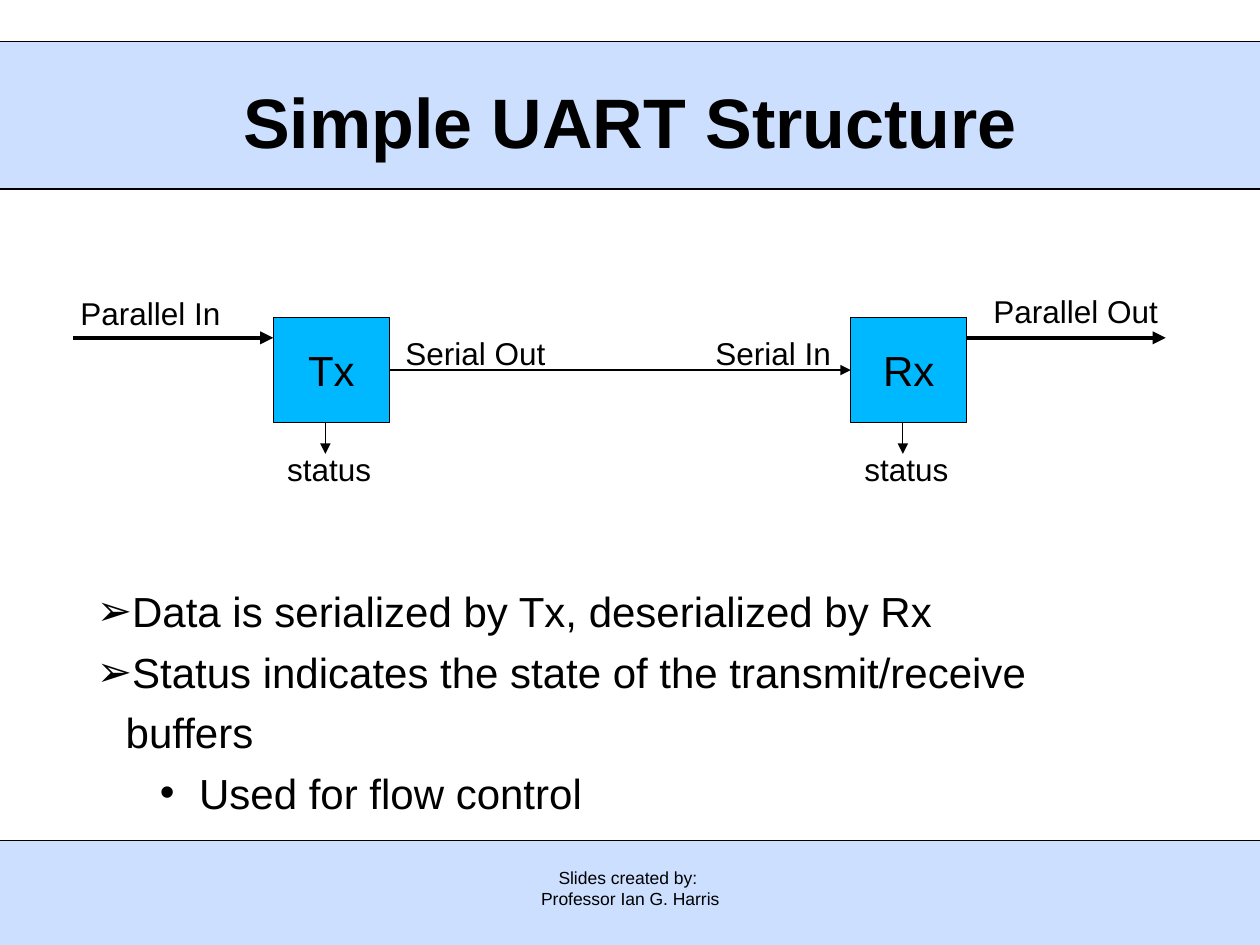
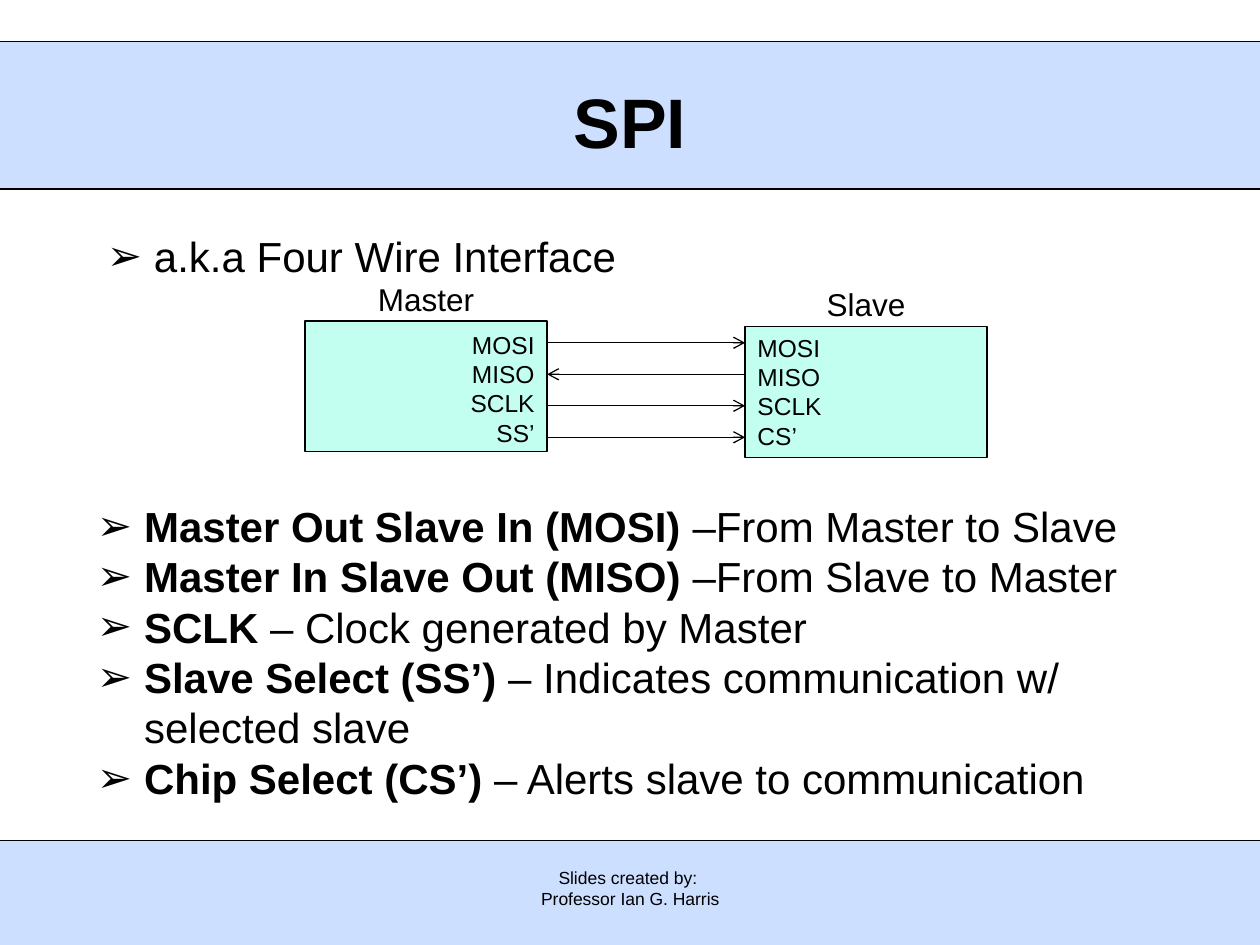
from lxml.etree import SubElement
from pptx import Presentation
from pptx.dml.color import RGBColor
from pptx.enum.shapes import MSO_CONNECTOR, MSO_SHAPE
from pptx.enum.text import MSO_ANCHOR, MSO_AUTO_SIZE, PP_ALIGN as ALIGN
from pptx.oxml.ns import qn
from pptx.util import Cm, Pt

COLORS = {
    "ink": "000000",
    "band": "CDDFFF",
    "station": "00B8FF",
    "device": "C2FFF0",
}
FONT = "Arial"
SLIDE_W, SLIDE_H = 25.4, 19.05
BANDS = [(16.94, 2.11), (0.84, 2.97)]  # top, height
RULES = [0.84, 3.81, 16.94]
ARROW_BULLET = ("➢", 0.95, 0.95)  # character, left margin, hanging indent
TIGHT_BULLET = ("➢", 0.58, 0.58)
DOT_BULLET = ("•", 2.06, 0.79)


def rgb(name):
    return RGBColor.from_string(COLORS[name])


# Basic parts; every length is in centimetres

def place(sp, x, y, w, h):
    sp.left, sp.top, sp.width, sp.height = Cm(x), Cm(y), Cm(w), Cm(h)


def write(tf, lines, size, align=ALIGN.LEFT):
    """Each line is a list of (text, bold) runs."""
    tf.word_wrap = True
    tf.auto_size = MSO_AUTO_SIZE.NONE
    for i, runs in enumerate(lines):
        p = tf.paragraphs[0] if i == 0 else tf.add_paragraph()
        p.alignment = align
        p.space_before = Pt(0)
        for text, bold in runs:
            r = p.add_run()
            r.text = text
            r.font.name, r.font.size, r.font.bold = FONT, Pt(size), bold
            r.font.color.rgb = rgb("ink")


def plain(*texts):
    return [[(text, False)] for text in texts]


def add_text(shapes, x, y, w, h, texts, size, align=ALIGN.CENTER):
    sp = shapes.add_textbox(Cm(x), Cm(y), Cm(w), Cm(h))
    write(sp.text_frame, plain(*texts), size, align)


def add_box(shapes, x, y, w, h, fill, line="ink"):
    sp = shapes.add_shape(MSO_SHAPE.RECTANGLE, Cm(x), Cm(y), Cm(w), Cm(h))
    sp.shadow.inherit = False
    sp.fill.solid()
    sp.fill.fore_color.rgb = rgb(fill)
    sp.line.color.rgb = rgb(line)
    sp.line.width = Pt(0.75)
    return sp


def add_line(shapes, x1, y1, x2, y2, width=0.75, head=None):
    cxn = shapes.add_connector(MSO_CONNECTOR.STRAIGHT,
                               Cm(x1), Cm(y1), Cm(x2), Cm(y2))
    cxn.line.color.rgb = rgb("ink")
    cxn.line.width = Pt(width)
    sp_pr = cxn.element.spPr
    if head:
        SubElement(sp_pr.find(qn("a:ln")), qn("a:tailEnd"), type=head)
    SubElement(sp_pr, qn("a:effectLst"))
    return cxn


def set_bullet(p, bullet, spacing):
    char, margin, hang = bullet
    p.line_spacing = spacing
    pPr = p._p.get_or_add_pPr()
    pPr.set("marL", str(Cm(margin)))
    pPr.set("indent", str(-Cm(hang)))
    clr = SubElement(pPr, qn("a:buClr"))
    SubElement(clr, qn("a:srgbClr"), val=COLORS["ink"])
    SubElement(pPr, qn("a:buFont"), typeface=FONT)
    SubElement(pPr, qn("a:buChar"), char=char)


def fill_list(ph, box, lines, bullets, spacing=1.0):
    place(ph, *box)
    write(ph.text_frame, lines, 24)
    for p, bullet in zip(ph.text_frame.paragraphs, bullets):
        p.level = 1 if bullet is DOT_BULLET else 0
        set_bullet(p, bullet, spacing)


# Shared frame: bands, rules, footer and title

def add_frame_slide(prs, layout, title):
    s = prs.slides.add_slide(prs.slide_layouts.get_by_name(layout))
    for top, height in BANDS:
        add_box(s.shapes, 0, top, SLIDE_W, height, "band", "band")
    for y in RULES:
        add_line(s.shapes, 0, y, SLIDE_W, y)
    add_text(s.shapes, 8.69, 17.35, 8.03, 1.24,
             ["Slides created by: ", "Professor Ian G. Harris"], 10)
    # Bring the placeholders in front of the bands
    for ph in list(s.placeholders):
        s.shapes.element.append(ph.element)
    place(s.shapes.title, 1.9, 0.84, 21.6, 3.18)
    write(s.shapes.title.text_frame, [[(title, True)]], 40, ALIGN.CENTER)
    return s


# UART diagram

def add_station(shapes, x, y, name):
    w, h = 2.34, 2.12
    sp = add_box(shapes, x, y, w, h, "station")
    tf = sp.text_frame
    write(tf, plain(name), 24, ALIGN.CENTER)
    tf.word_wrap = False
    tf.vertical_anchor = MSO_ANCHOR.MIDDLE
    add_line(shapes, x + 1.05, y + h, x + 1.05, y + 2.75, head="triangle")
    add_text(shapes, x - 0.64, y + 2.54, 3.53, 1.02, ["status"], 18)
    return sp


def add_uart_diagram(s, x, y):
    shapes = s.shapes.add_group_shape().shapes
    tx = add_station(shapes, x + 4.24, y + 0.63, "Tx")
    rx = add_station(shapes, x + 15.88, y + 0.63, "Rx")
    serial = add_line(shapes, x + 6.58, y + 1.69, x + 15.88, y + 1.69,
                      head="triangle")
    serial.begin_connect(tx, 3)
    serial.end_connect(rx, 1)
    for start, end in [(0.2, 4.24), (18.22, 22.23)]:
        add_line(shapes, x + start, y + 1.04, x + end, y + 1.04, 2.5, "triangle")
    for text, dx, dy, w in [("Serial Out", 6.55, 0.84, 3.53),
                            ("Serial In", 12.55, 0.84, 3.53),
                            ("Parallel In", 0, 0.03, 3.53),
                            ("Parallel Out", 18.41, 0, 4.01)]:
        add_text(shapes, x + dx, y + dy, w, 1.02, [text], 18)


# SPI diagram

def add_device(shapes, x, y, name, pins, pin_x, pin_y, align):
    add_box(shapes, x, y, 4.88, 2.64, "device")
    add_text(shapes, x + pin_x, y + pin_y, 1.92, 2.64, pins, 14, align)
    add_text(shapes, x + 0.42, y - 0.95, 4.04, 1.02, [name], 18)


def add_spi_diagram(s, x, y):
    shapes = s.shapes.add_group_shape().shapes
    bus = ["MOSI", "MISO", "SCLK"]
    add_device(shapes, x, y + 0.96, "Master", bus + ["SS’"],
               2.96, 0.05, ALIGN.RIGHT)
    add_device(shapes, x + 8.87, y + 1.07, "Slave", bus + ["CS’"],
               0, 0, ALIGN.LEFT)
    for i, pin in enumerate(bus + ["SS’"]):
        ends = [x + 4.88, x + 8.87]
        if pin == "MISO":
            ends.reverse()
        wire_y = y + 1.4 + i * 0.635
        add_line(shapes, ends[0], wire_y, ends[1], wire_y, head="arrow")


# Slides

def uart_slide(prs):
    s = add_frame_slide(prs, "Title and Content", "Simple UART Structure")
    add_uart_diagram(s, 1.27, 5.77)
    fill_list(s.placeholders[1], (1.7, 11.48, 21.7, 5.1), plain(
        "Data is serialized by Tx, deserialized by Rx",
        "Status indicates the state of the transmit/receive buffers",
        "Used for flow control",
    ), [TIGHT_BULLET, TIGHT_BULLET, DOT_BULLET], 1.2)


def spi_slide(prs):
    s = add_frame_slide(prs, "Two Content", "SPI")
    fill_list(s.placeholders[1], (1.9, 4.01, 22.66, 1.6),
              plain("a.k.a Four Wire Interface"), [ARROW_BULLET], 1.5)
    add_spi_diagram(s, 6.15, 5.51)
    signals = [
        ("Master Out Slave In (MOSI) ", "–From Master to Slave"),
        ("Master In Slave Out (MISO) ", "–From Slave to Master"),
        ("SCLK ", "– Clock generated by Master"),
        ("Slave Select (SS’)", " – Indicates communication w/ selected slave"),
        ("Chip Select (CS’) ", "– Alerts slave to communication"),
    ]
    fill_list(s.placeholders[2], (1.7, 9.96, 22.66, 6.9),
              [[(name, True), (role, False)] for name, role in signals],
              [ARROW_BULLET] * len(signals))


def main():
    prs = Presentation()
    prs.slide_width, prs.slide_height = Cm(SLIDE_W), Cm(SLIDE_H)
    uart_slide(prs)
    spi_slide(prs)
    prs.save("out.pptx")


if __name__ == "__main__":
    main()
